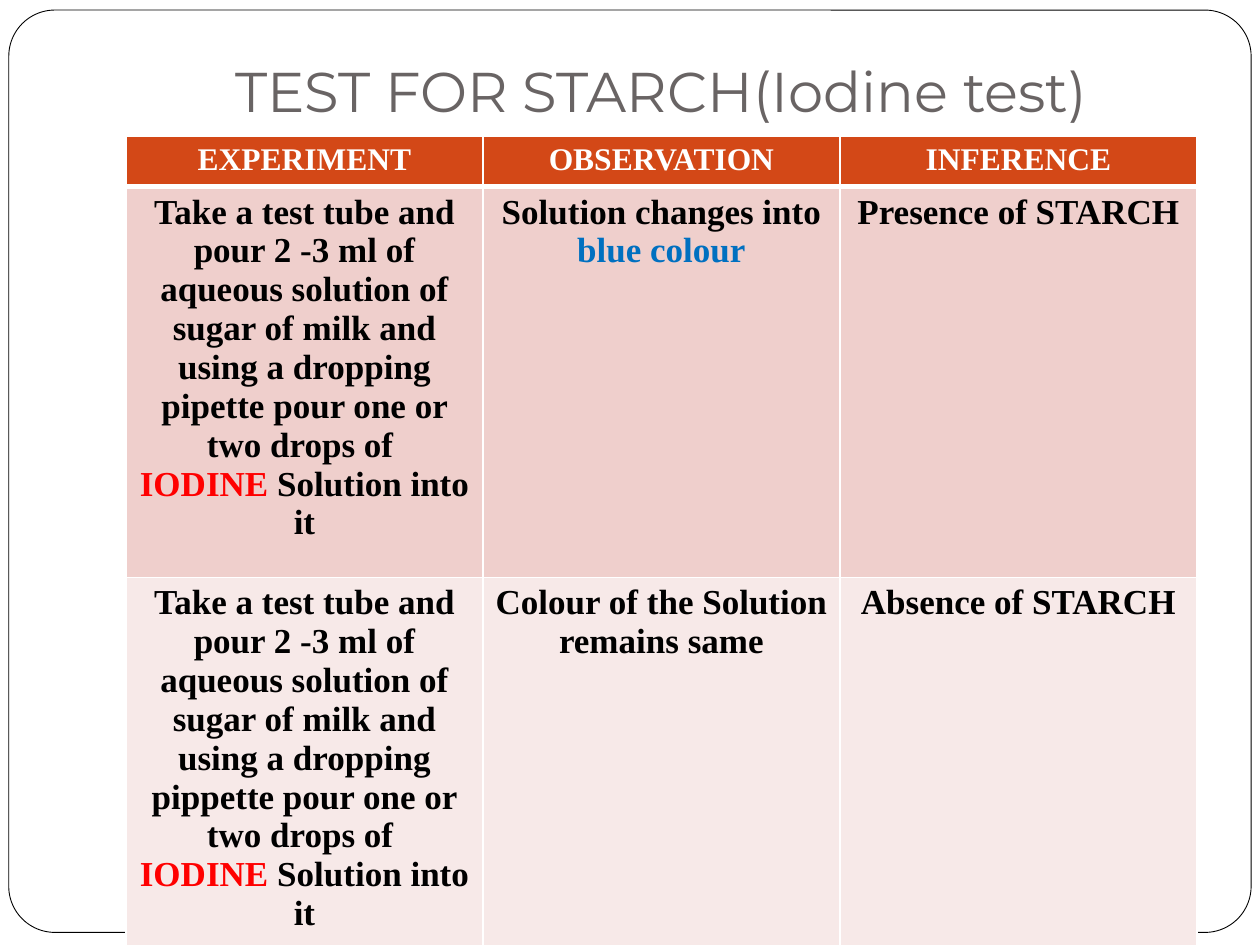
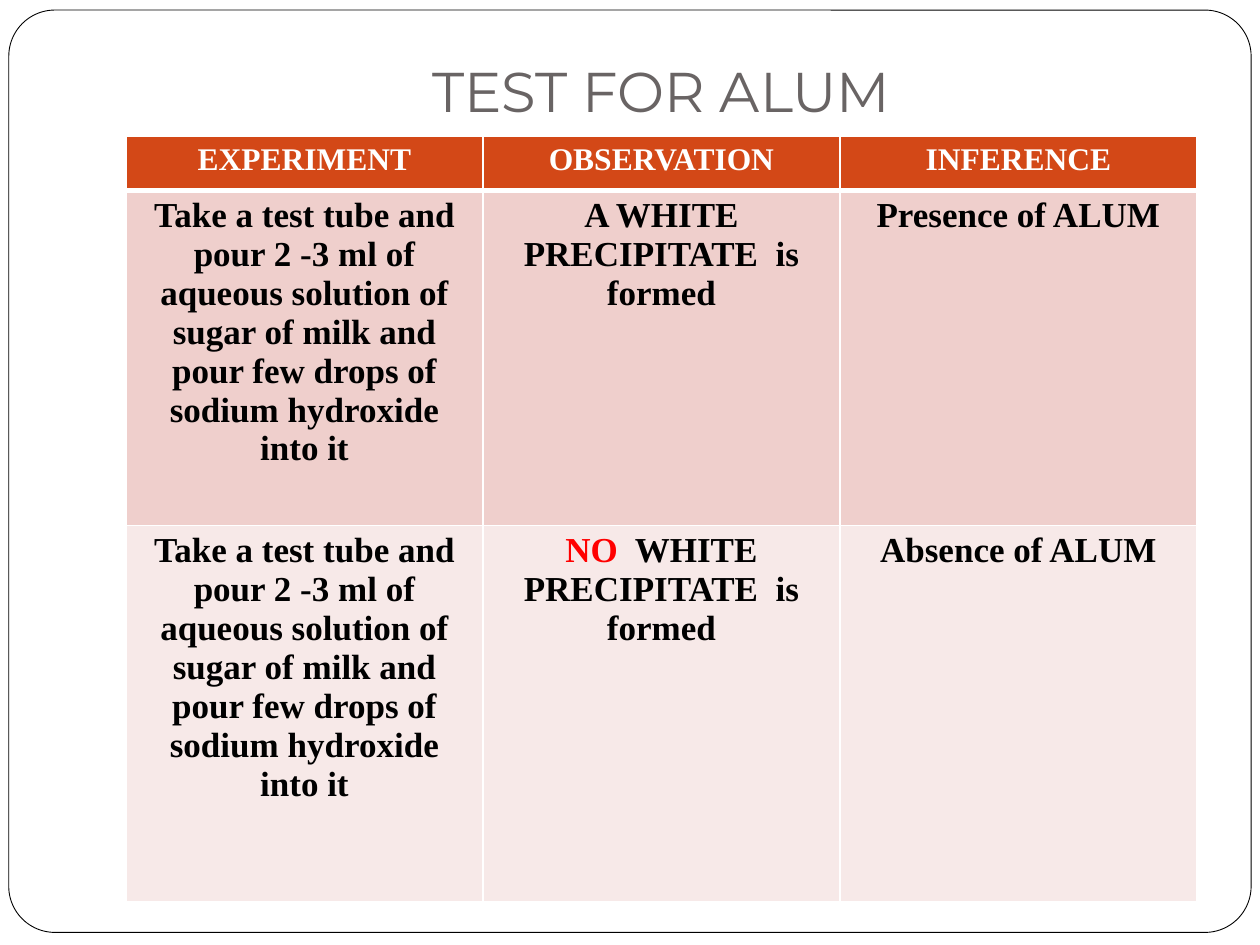
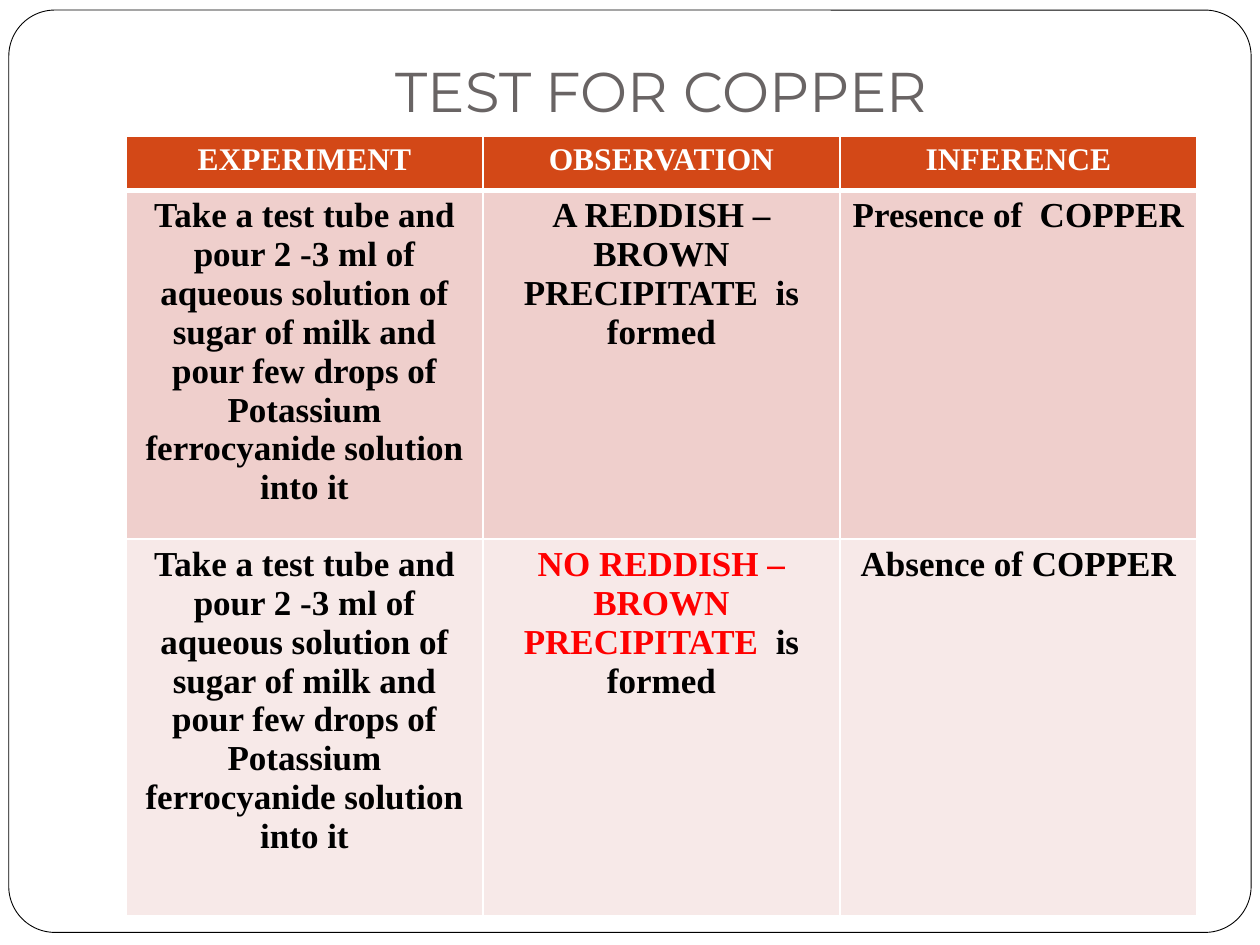
from collections import namedtuple

from lxml import etree
from pptx import Presentation
from pptx.dml.color import RGBColor
from pptx.enum.shapes import MSO_SHAPE
from pptx.enum.text import MSO_ANCHOR, PP_ALIGN
from pptx.oxml.ns import qn
from pptx.util import Inches, Pt

ROUNDED = MSO_SHAPE.ROUNDED_RECTANGLE
BOTTOM = MSO_ANCHOR.BOTTOM
CENTER = PP_ALIGN.CENTER

WHITE = RGBColor(0xFF, 0xFF, 0xFF)
BLACK = RGBColor(0x00, 0x00, 0x00)
GREY = RGBColor(0x69, 0x64, 0x64)
ORANGE = RGBColor(0xD3, 0x48, 0x17)
ROSE = RGBColor(0xEF, 0xCF, 0xCC)
PALE_ROSE = RGBColor(0xF7, 0xE9, 0xE8)
RED = RGBColor(0xFF, 0x00, 0x00)
BLUE = RGBColor(0x00, 0x70, 0xC0)

Box = namedtuple("Box", "left top width height")
GRID_COLUMNS, GRID_ROWS = 10, 7.5
UNIT = Inches(1)
FRAME_BOX = Box(0.07, 0.08, 9.86, 7.32)
TITLE_BOX = Box(1, 0.3, 8.5, 0.78)
RESULTS_BOX = Box(1, 1.08, 8.5, 6.08)

TITLE_FONT = {"name": "Montserrat", "size": Pt(32), "bold": False}
HEADING_FONT = {"name": "Times New Roman", "size": Pt(18), "bold": True}
BODY_FONT = {**HEADING_FONT, "size": Pt(20)}
TITLE_FRAME = {
    "word_wrap": True,
    "vertical_anchor": BOTTOM,
    "margin_left": Inches(0.1),
    "margin_top": Inches(0.05),
    "margin_right": Inches(0.1),
    "margin_bottom": Inches(0.1),
}
ROW_STYLES = [
    (HEADING_FONT, WHITE, ORANGE),
    (BODY_FONT, BLACK, ROSE),
    (BODY_FONT, BLACK, PALE_ROSE),
]
THIN, THICK = Pt(1), Pt(3)

HEADINGS = ["EXPERIMENT", "OBSERVATION", "INFERENCE"]
SAMPLE = "Take a test tube and pour 2 -3 ml of aqueous solution of sugar of milk and "
ALUM_STEP = SAMPLE + "pour few drops of sodium hydroxide into it"
COPPER_STEP = SAMPLE + "pour few drops of Potassium ferrocyanide solution into it"


def iodine_step(dropper):
    return [
        f"{SAMPLE}using a dropping {dropper} pour one or two drops of  ",
        ("IODINE", RED),
        " Solution into it",
    ]


TESTS = [
    ("TEST FOR STARCH(Iodine test)", [0.39, 2.68, 3.01], [
        [iodine_step("pipette"), ["Solution changes into ", ("blue colour", BLUE)],
         "Presence of STARCH"],
        [iodine_step("pippette"), "Colour of the Solution remains same",
         "Absence of STARCH"],
    ]),
    ("TEST FOR ALUM", [0.43, 2.66, 2.99], [
        [ALUM_STEP, "A WHITE PRECIPITATE  is formed", "Presence of ALUM"],
        [ALUM_STEP, [("NO ", RED), " WHITE PRECIPITATE  is formed"],
         "Absence of ALUM"],
    ]),
    ("TEST FOR COPPER", [0.43, 2.66, 2.99], [
        [COPPER_STEP, "A REDDISH – BROWN PRECIPITATE  is formed",
         "Presence of  COPPER"],
        [COPPER_STEP, [("NO REDDISH – BROWN PRECIPITATE  ", RED), "is formed"],
         "Absence of COPPER"],
    ]),
]


def place(box):
    return [round(length * UNIT) for length in box]


def apply(target, values):
    for attribute, value in values.items():
        setattr(target, attribute, value)


def write(text_frame, content, font, color):
    paragraph = text_frame.paragraphs[0]
    paragraph.alignment = CENTER
    for piece in [content] if isinstance(content, str) else content:
        words, ink = (piece, color) if isinstance(piece, str) else piece
        run = paragraph.add_run()
        run.text = words
        apply(run.font, font)
        run.font.color.rgb = ink


def add_frame(slide, box):
    frame = slide.shapes.add_shape(ROUNDED, *place(box))
    frame.adjustments[0] = 0.05
    frame.shadow.inherit = False
    frame.fill.solid()
    frame.fill.fore_color.rgb = WHITE
    frame.line.color.rgb = BLACK
    frame.line.width = Pt(0.5)


def add_title(slide, box, title):
    text_frame = slide.shapes.add_textbox(*place(box)).text_frame
    apply(text_frame, TITLE_FRAME)
    write(text_frame, title, TITLE_FONT, GREY)


def add_borders(cell, widths):
    properties = cell._tc.get_or_add_tcPr()
    for side, width in widths.items():
        border = etree.SubElement(properties, qn(f"a:ln{side}"), w=str(width))
        fill = etree.SubElement(border, qn("a:solidFill"))
        etree.SubElement(fill, qn("a:srgbClr"), val=str(WHITE))


def add_results(slide, box, row_heights, findings):
    rows = [HEADINGS, *findings]
    table = slide.shapes.add_table(len(rows), len(HEADINGS), *place(box)).table
    for column in table.columns:
        column.width = round(box.width * UNIT / len(HEADINGS))
    for index, (height, contents) in enumerate(zip(row_heights, rows)):
        table.rows[index].height = Inches(height)
        font, ink, background = ROW_STYLES[index]
        widths = {
            "L": THIN,
            "R": THIN,
            "T": THICK if index == 1 else THIN,
            "B": THICK if index == 0 else THIN,
        }
        for cell, content in zip(table.rows[index].cells, contents):
            add_borders(cell, widths)
            cell.fill.solid()
            cell.fill.fore_color.rgb = background
            write(cell.text_frame, content, font, ink)


def add_test_slide(deck, title, row_heights, findings):
    slide = deck.slides.add_slide(deck.slide_layouts[6])
    add_frame(slide, FRAME_BOX)
    add_title(slide, TITLE_BOX, title)
    add_results(slide, RESULTS_BOX, row_heights, findings)


def main():
    deck = Presentation()
    deck.slide_width = round(GRID_COLUMNS * UNIT)
    deck.slide_height = round(GRID_ROWS * UNIT)
    for test in TESTS:
        add_test_slide(deck, *test)
    deck.save("out.pptx")


if __name__ == "__main__":
    main()
